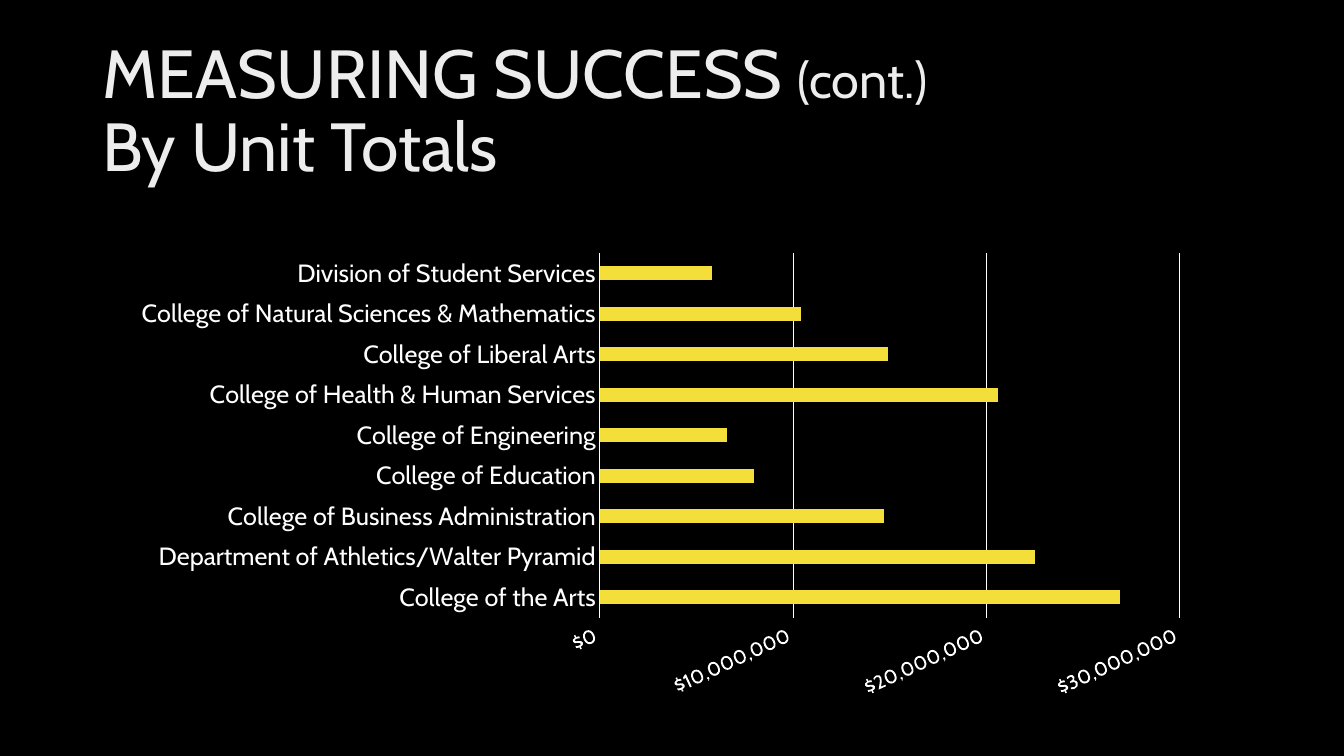
from dataclasses import dataclass

import lxml.etree
import pptx
import pptx.chart.data
import pptx.dml.color
import pptx.enum.chart
import pptx.enum.text
import pptx.oxml
import pptx.oxml.ns
import pptx.util

EMU_PER_PX = 9525
FONT = "Cabin"
BLACK = pptx.dml.color.RGBColor(0x00, 0x00, 0x00)
WHITE = pptx.dml.color.RGBColor(0xFF, 0xFF, 0xFF)
TITLE_GREY = pptx.dml.color.RGBColor(0xED, 0xED, 0xED)
YELLOW = pptx.dml.color.RGBColor(0xF4, 0xDE, 0x3A)
MONEY = '"$"#,##0_);[Red]\\("$"#,##0\\)'


@dataclass
class UnitTotal:
    name: str
    dollars: int


# Listed from the bottom bar to the top one
UNIT_TOTALS = [
    UnitTotal("College of the Arts", 26_900_000),
    UnitTotal("Department of Athletics/Walter Pyramid", 22_500_000),
    UnitTotal("College of Business Administration", 14_700_000),
    UnitTotal("College of Education", 8_000_000),
    UnitTotal("College of Engineering", 6_600_000),
    UnitTotal("College of Health & Human Services", 20_600_000),
    UnitTotal("College of Liberal Arts", 14_900_000),
    UnitTotal("College of Natural Sciences & Mathematics", 10_400_000),
    UnitTotal("Division of Student Services", 5_800_000),
]


def px(length: int) -> pptx.util.Emu:
    return pptx.util.Emu(length * EMU_PER_PX)


def set_font(font, size: float, color: pptx.dml.color.RGBColor) -> None:
    font.name = FONT
    font.size = pptx.util.Pt(size)
    font.bold = False
    font.color.rgb = color


def set_line(line) -> None:
    line.color.rgb = WHITE
    line.width = pptx.util.Pt(0.75)


def fill_title(title) -> None:
    title.left, title.top, title.width, title.height = px(88), px(38), px(1104), px(139)
    frame = title.text_frame
    frame.word_wrap = True
    frame.auto_size = pptx.enum.text.MSO_AUTO_SIZE.NONE
    frame.vertical_anchor = pptx.enum.text.MSO_ANCHOR.MIDDLE
    para = frame.paragraphs[0]
    para.alignment = pptx.enum.text.PP_ALIGN.LEFT
    para.line_spacing = 0.9
    for text, size in (("MEASURING SUCCESS ", 48.6), ("(cont.)", 36)):
        span = para.add_run()
        span.text = text
        set_font(span.font, size, TITLE_GREY)
    para.add_line_break()
    span = para.add_run()
    span.text = "By Unit Totals"
    set_font(span.font, 48.6, TITLE_GREY)


def set_plot_layout(chart, **fractions: float) -> None:
    """Fix the inner plot area as fractions of the chart."""
    qn = pptx.oxml.ns.qn
    plot_area = chart.element.find(".//" + qn("c:plotArea"))
    for old in plot_area.findall(qn("c:layout")):
        plot_area.remove(old)
    layout = lxml.etree.Element(qn("c:layout"))
    manual = lxml.etree.SubElement(layout, qn("c:manualLayout"))
    settings = {"layoutTarget": "inner", "xMode": "edge", "yMode": "edge", **fractions}
    for name, value in settings.items():
        lxml.etree.SubElement(manual, qn("c:" + name)).set("val", str(value))
    plot_area.insert(0, layout)


def add_totals_chart(page) -> None:
    data = pptx.chart.data.CategoryChartData(number_format=MONEY)
    data.categories = [unit.name for unit in UNIT_TOTALS]
    data.add_series("Series 1", [unit.dollars for unit in UNIT_TOTALS])
    chart = page.shapes.add_chart(
        pptx.enum.chart.XL_CHART_TYPE.BAR_CLUSTERED,
        px(130), px(228), px(1063), px(438), data).chart
    chart.has_legend = False
    chart.has_title = False
    set_font(chart.font, 10, WHITE)
    set_plot_layout(chart, x=0.415, y=0.03, w=0.52, h=0.8)

    # Bars
    plot = chart.plots[0]
    plot.gap_width = 182
    plot.vary_by_categories = False
    fill = plot.series[0].format.fill
    fill.solid()
    fill.fore_color.rgb = YELLOW

    # Axes
    units, dollars = chart.category_axis, chart.value_axis
    for axis, size in ((units, 18), (dollars, 14)):
        axis.major_tick_mark = pptx.enum.chart.XL_TICK_MARK.NONE
        axis.minor_tick_mark = pptx.enum.chart.XL_TICK_MARK.NONE
        set_font(axis.tick_labels.font, size, WHITE)
    set_line(units.format.line)
    dollars.format.line.fill.background()
    dollars.has_major_gridlines = True
    set_line(dollars.major_gridlines.format.line)
    dollars.minimum_scale, dollars.maximum_scale = 0, 30_000_000
    dollars.major_unit = 10_000_000
    dollars.tick_labels.number_format = MONEY
    dollars.tick_labels.number_format_is_linked = False

    # Slanted dollar labels: 25 degrees, in 60000ths
    body = dollars._element.find(
        pptx.oxml.ns.qn("c:txPr") + "/" + pptx.oxml.ns.qn("a:bodyPr"))
    body.set("rot", str(-25 * 60000))
    body.set("vert", "horz")


def main() -> None:
    deck = pptx.Presentation()
    deck.slide_width, deck.slide_height = px(1280), px(720)
    page = deck.slides.add_slide(deck.slide_layouts.get_by_name("Title Only"))
    page.background.fill.solid()
    page.background.fill.fore_color.rgb = BLACK
    fill_title(page.shapes.title)
    add_totals_chart(page)
    deck.save("out.pptx")


if __name__ == "__main__":
    main()
